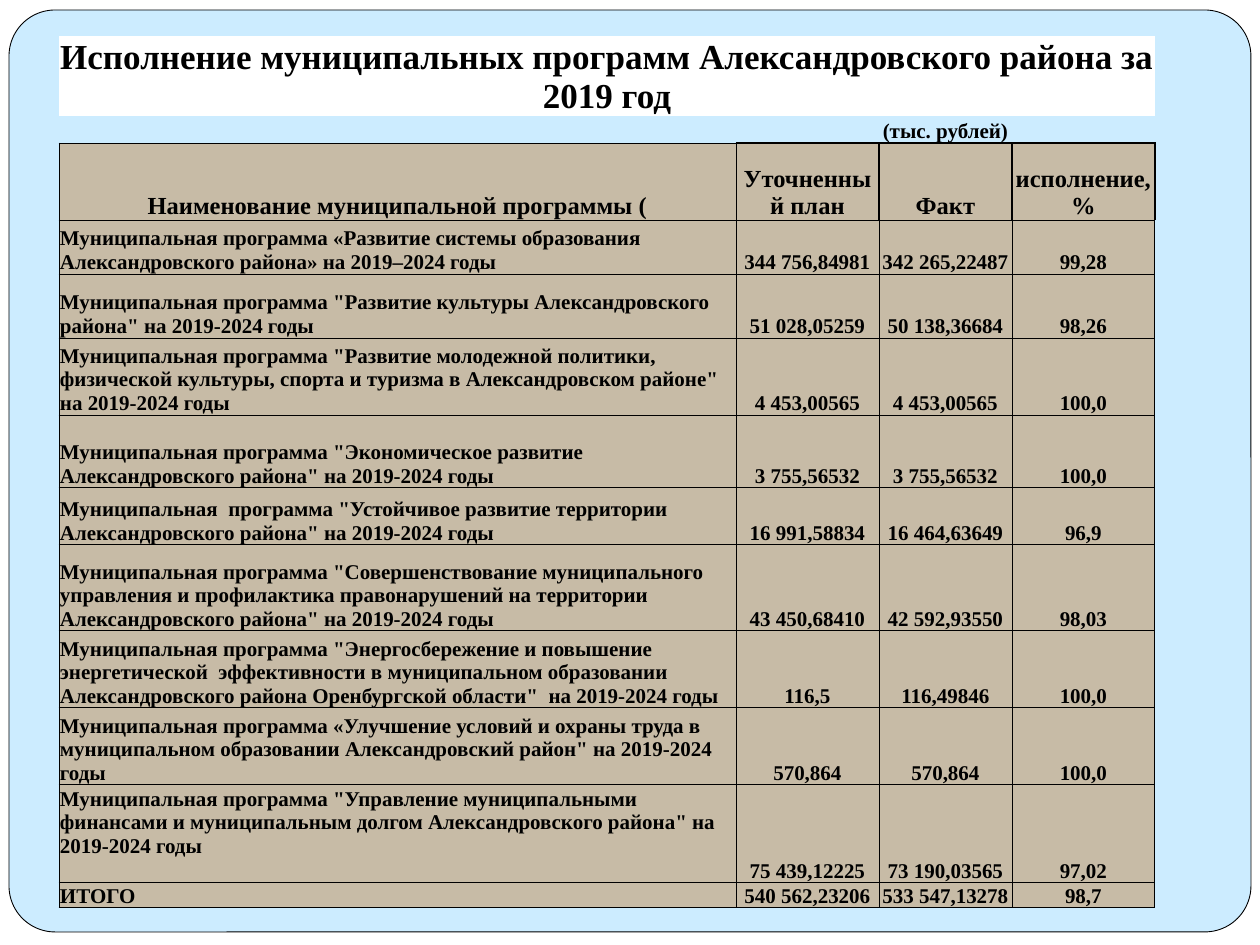
from dataclasses import dataclass

from lxml.etree import SubElement
from pptx import Presentation
from pptx.dml.color import RGBColor
from pptx.enum.shapes import MSO_SHAPE
from pptx.enum.text import MSO_ANCHOR, PP_ALIGN
from pptx.oxml.ns import qn
from pptx.util import Pt

EMU_PER_PX = 914400 / 126
NO_TABLE_STYLE = "{2D5ABB26-0587-4C30-8999-92F81FD0307C}"


@dataclass(frozen=True)
class Theme:
    font: str = "Times New Roman"
    ink: str = "000000"
    paper: str = "FFFFFF"
    sky: str = "CCECFF"
    sand: str = "C7BBA6"
    title_size: int = 20
    header_size: int = 14
    body_size: int = 12
    thin: float = 0.5
    thick: float = 1


THEME = Theme()

TITLE = "Исполнение муниципальных программ Александровского района за 2019 год"
UNITS = "(тыс. рублей)"
HEADERS = ("Наименование муниципальной программы (", "Уточненный план", "Факт", "исполнение, %")
PROGRAMS = [
    ("Муниципальная программа «Развитие системы образования Александровского района» на 2019–2024 годы",
     "344 756,84981", "342 265,22487", "99,28"),
    ('Муниципальная программа "Развитие культуры Александровского района" на 2019-2024 годы',
     "51 028,05259", "50 138,36684", "98,26"),
    ('Муниципальная программа "Развитие молодежной политики, физической культуры, спорта '
     'и туризма в Александровском районе" на 2019-2024 годы',
     "4 453,00565", "4 453,00565", "100,0"),
    ('Муниципальная программа "Экономическое развитие Александровского района" на 2019-2024 годы',
     "3 755,56532", "3 755,56532", "100,0"),
    ('Муниципальная  программа "Устойчивое развитие территории Александровского района" на 2019-2024 годы',
     "16 991,58834", "16 464,63649", "96,9"),
    ('Муниципальная программа "Совершенствование муниципального управления и профилактика '
     'правонарушений на территории Александровского района" на 2019-2024 годы',
     "43 450,68410", "42 592,93550", "98,03"),
    ('Муниципальная программа "Энергосбережение и повышение энергетической  эффективности '
     'в муниципальном образовании Александровского района Оренбургской области"  на 2019-2024 годы',
     "116,5", "116,49846", "100,0"),
    ("Муниципальная программа «Улучшение условий и охраны труда в муниципальном образовании "
     'Александровский район" на 2019-2024 годы',
     "570,864", "570,864", "100,0"),
    ('Муниципальная программа "Управление муниципальными финансами и муниципальным долгом '
     'Александровского района" на 2019-2024 годы',
     "75 439,12225", "73 190,03565", "97,02"),
    ("ИТОГО", "540 562,23206", "533 547,13278", "98,7"),
]
COLUMN_WIDTHS = (677, 143, 133, 143)
ROW_HEIGHTS = (80, 27, 77, 54, 64, 77, 73, 57, 86, 77, 77, 98, 25)
TITLE_ROW, UNITS_ROW, HEADER_ROW, FIRST_PROGRAM_ROW = range(4)
LAST_PROGRAM_ROW = len(ROW_HEIGHTS) - 2


def px(length):
    return round(length * EMU_PER_PX)


def color(value):
    return RGBColor.from_string(value)


def add_panel(slide, kind, left, top, width, height, fill, line=None):
    shape = slide.shapes.add_shape(kind, px(left), px(top), px(width), px(height))
    shape.shadow.inherit = False
    shape.fill.solid()
    shape.fill.fore_color.rgb = color(fill)
    if line:
        shape.line.color.rgb = color(THEME.ink)
        shape.line.width = Pt(line)
    else:
        shape.line.fill.background()
    return shape


def write_text(cell, text, size=THEME.body_size, align=PP_ALIGN.CENTER, bottom=0):
    cell.margin_left = cell.margin_right = cell.margin_top = px(1)
    cell.margin_bottom = px(bottom)
    cell.vertical_anchor = MSO_ANCHOR.BOTTOM
    paragraph = cell.text_frame.paragraphs[0]
    paragraph.alignment = align
    if not text:
        SubElement(paragraph._p, qn("a:endParaRPr"), sz=str(size * 100))
        return
    run = paragraph.add_run()
    run.text = text
    run.font.name = THEME.font
    run.font.size = Pt(size)
    run.font.bold = True
    run.font.color.rgb = color(THEME.ink)


def set_borders(cell, widths):
    """Draw the left, right, top and bottom edges; a zero width hides an edge."""
    properties = cell._tc.get_or_add_tcPr()
    for side, width in zip("LRTB", widths):
        line = SubElement(properties, qn(f"a:ln{side}"), w=str(Pt(width)))
        if width:
            fill = SubElement(line, qn("a:solidFill"))
            SubElement(fill, qn("a:srgbClr"), val=THEME.ink)
        else:
            SubElement(line, qn("a:noFill"))


def border_widths(row, column):
    thin, thick = THEME.thin, THEME.thick
    if row == TITLE_ROW:
        return 0, 0, 0, 0
    if row == UNITS_ROW:
        return 0, 0, 0, thick if column else thin
    if row == HEADER_ROW and column:
        return thick if column > 1 else thin, thick, thick, thin
    return thin, thin, thin, thin


def fill_cell(cell, fill):
    if fill:
        cell.fill.solid()
        cell.fill.fore_color.rgb = color(fill)
    else:
        cell.fill.background()


def cell_format(row, column):
    if row == TITLE_ROW:
        return {"size": THEME.title_size}
    if row == HEADER_ROW:
        return {"size": THEME.header_size}
    if row >= FIRST_PROGRAM_ROW and column == 0:
        return {"align": PP_ALIGN.LEFT, "bottom": 25 if row == LAST_PROGRAM_ROW else 0}
    return {}


def add_program_table(slide, left, top):
    rows = [(TITLE, "", "", ""), ("", "", UNITS, ""), HEADERS, *PROGRAMS]
    frame = slide.shapes.add_table(
        len(rows), len(COLUMN_WIDTHS), px(left), px(top),
        px(sum(COLUMN_WIDTHS)), px(sum(ROW_HEIGHTS)))
    table = frame.table
    table.first_row = table.horz_banding = False
    table._tbl.tblPr.find(qn("a:tableStyleId")).text = NO_TABLE_STYLE
    for column, width in zip(table.columns, COLUMN_WIDTHS):
        column.width = px(width)
    for row, height in zip(table.rows, ROW_HEIGHTS):
        row.height = px(height)
    row_fills = {TITLE_ROW: THEME.paper, UNITS_ROW: None}
    for row, texts in enumerate(rows):
        for column, text in enumerate(texts):
            cell = table.cell(row, column)
            write_text(cell, text, **cell_format(row, column))
            set_borders(cell, border_widths(row, column))
            fill_cell(cell, row_fills.get(row, THEME.sand))
    table.cell(TITLE_ROW, 0).merge(table.cell(TITLE_ROW, len(COLUMN_WIDTHS) - 1))


def main():
    presentation = Presentation()
    presentation.slide_width, presentation.slide_height = px(1260), px(945)
    slide = presentation.slides.add_slide(presentation.slide_layouts[6])
    slide.background.fill.solid()
    slide.background.fill.fore_color.rgb = color(THEME.sky)
    add_panel(slide, MSO_SHAPE.RECTANGLE, 0, 0, 1260, 945, THEME.paper)
    panel = add_panel(slide, MSO_SHAPE.ROUNDED_RECTANGLE, 9, 10, 1242, 922, THEME.sky, line=THEME.thin)
    panel.adjustments[0] = 0.05
    add_program_table(slide, 59, 36)
    presentation.save("out.pptx")


if __name__ == "__main__":
    main()
